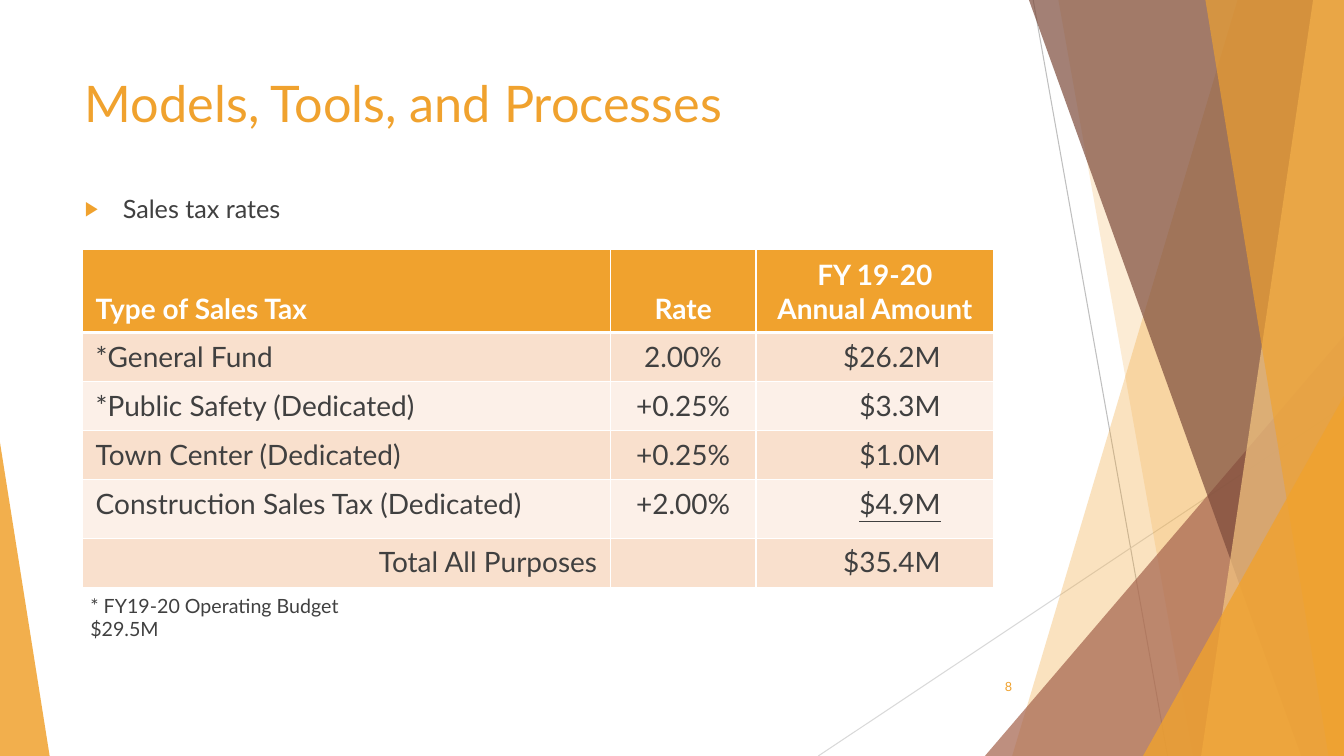
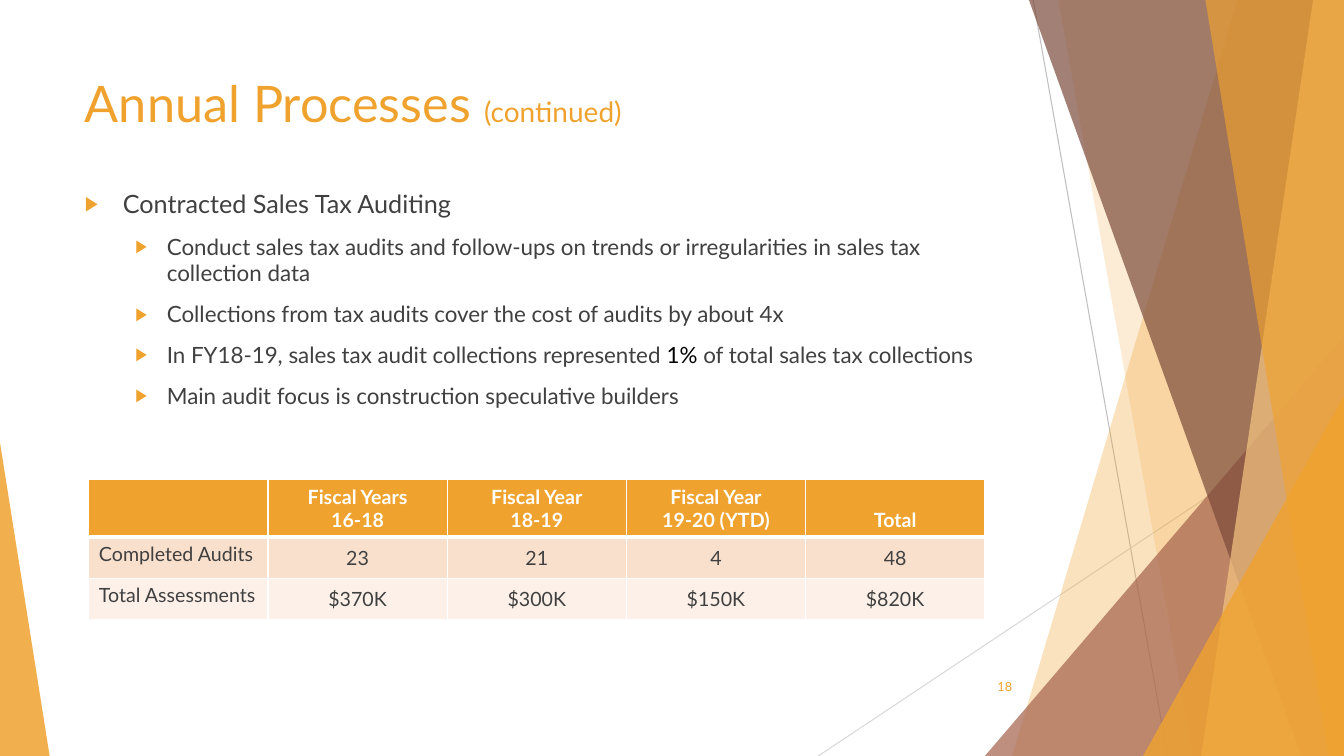
from dataclasses import dataclass

from pptx import Presentation
from pptx.dml.color import RGBColor
from pptx.enum.shapes import MSO_CONNECTOR, MSO_SHAPE
from pptx.enum.text import MSO_ANCHOR, MSO_AUTO_SIZE, PP_ALIGN
from pptx.oxml.ns import qn
from pptx.oxml.xmlchemy import OxmlElement
from pptx.util import Pt

LEFT, MID, RIGHT = PP_ALIGN.LEFT, PP_ALIGN.CENTER, PP_ALIGN.RIGHT
TOP, CENTER, BOTTOM = MSO_ANCHOR.TOP, MSO_ANCHOR.MIDDLE, MSO_ANCHOR.BOTTOM
STRAIGHT, TRIANGLE = MSO_CONNECTOR.STRAIGHT, MSO_SHAPE.ISOSCELES_TRIANGLE
FIXED = MSO_AUTO_SIZE.NONE

WIDE, HIGH = 960, 540
FACE = "Lato"
COLORS = {
    "gold": "F0A22E", "sand": "F6C782", "rust": "A5644E", "brown": "7C4B3B",
    "text": "404040", "black": "000000", "white": "FFFFFF",
    "dark": "F9E0CD", "light": "FCF0E8", "gray": "BFBFBF", "pale": "D9D9D9",
}
FRAME = {"word_wrap": True, "auto_size": FIXED, "vertical_anchor": TOP}


@dataclass(frozen=True)
class Band:
    """A panel reaching the right edge; head and foot are its left corners."""
    head: float
    foot: float
    color: str
    alpha: int


@dataclass(frozen=True)
class Wedge:
    """A right triangle standing on the slide's foot."""
    left: float
    top: float
    width: float
    tip: int
    color: str
    alpha: int


@dataclass(frozen=True)
class Ray:
    start: tuple[float, float]
    end: tuple[float, float]
    color: str


@dataclass(frozen=True)
class Run:
    text: str
    size: float
    color: str = "text"
    bold: bool = False
    under: bool = False


@dataclass(frozen=True)
class Level:
    indent: float
    hang: float


@dataclass(frozen=True)
class Item:
    level: int
    runs: list[Run]


@dataclass(frozen=True)
class Col:
    width: float
    align: PP_ALIGN
    anchor: MSO_ANCHOR = TOP
    inset: float | None = None


@dataclass(frozen=True)
class Cell:
    text: str
    align: PP_ALIGN | None = None
    under: bool = False


@dataclass(frozen=True)
class Grid:
    left: float
    top: float
    size: float
    side: float
    pad: float
    cols: list[Col]
    rows: list[float]
    cells: list[list[str | Cell]]


@dataclass(frozen=True)
class Page:
    number: str
    title: list[Run]
    items: list[Item]
    top: float
    height: float
    grid: Grid
    note: str = ""


RAYS = [Ray((738, 0), (834, HIGH), "gray"), Ray((WIDE, 290), (584.5, HIGH), "pale")]
PANELS = [
    Band(884, 723, "gold", 30),
    Band(756, 852, "gold", 20),
    Wedge(703.5, 240, 256.5, 1, "rust", 72),
    Band(735, 929.5, "brown", 70),
    Band(938, 858, "sand", 70),
    Band(861, 949, "gold", 65),
    Wedge(816.5, 283, 143.5, 1, "gold", 80),
    Wedge(0, 316, 35.5, 0, "gold", 85),
]
LEVELS = [Level(27, 27), Level(58.5, 22.5)]

RATES = Grid(
    59, 178, 20, 9.4, 5,
    [Col(377, LEFT), Col(104, MID), Col(170, RIGHT, inset=38)],
    [59.5, 35, 35, 35, 42, 35],
    [
        ["Type of Sales Tax", "Rate", "FY 19-20\nAnnual Amount"],
        ["*General Fund", "2.00%", "$26.2M"],
        ["*Public Safety (Dedicated)", "+0.25%", "$3.3M"],
        ["Town Center (Dedicated)", "+0.25%", "$1.0M"],
        ["Construction Sales Tax (Dedicated)", "+2.00%", Cell("$4.9M", under=True)],
        [Cell("Total All Purposes", RIGHT), "", "$35.4M"],
    ],
)
AUDITS = Grid(
    63.5, 342.5, 14, 7.2, 3.6,
    [Col(128, LEFT)] + [Col(128, MID, CENTER)] * 4,
    [41, 29.5, 29.5],
    [
        ["", "Fiscal Years\n16-18", "Fiscal Year\n18-19", "Fiscal Year\n19-20 (YTD)", "Total"],
        ["Completed Audits", "23", "21", "4", "48"],
        ["Total Assessments", "$370K", "$300K", "$150K", "$820K"],
    ],
)
PAGES = [
    Page("8", [Run("Models, Tools, and Processes", 36, "gold")],
         [Item(0, [Run("Sales tax rates", 18)])],
         134.5, 327, RATES, "* FY19-20 Operating Budget $29.5M"),
    Page("18", [Run("Annual Processes ", 36, "gold"), Run("(continued)", 20, "gold")],
         [
             Item(0, [Run("Contracted Sales Tax Auditing", 18)]),
             Item(1, [Run("Conduct sales tax audits and follow-ups on trends or "
                          "irregularities in sales tax collection data", 16)]),
             Item(1, [Run("Collections from tax audits cover the cost of audits by about 4x", 16)]),
             Item(1, [Run("In FY18-19, sales tax audit collections represented ", 16),
                      Run("1%", 16, "black"),
                      Run(" of total sales tax collections", 16)]),
             Item(1, [Run("Main audit focus is construction speculative builders", 16)]),
         ],
         131, 305, AUDITS),
]


def tint(name: str) -> RGBColor:
    return RGBColor.from_string(COLORS[name])


def apply(target, values: dict) -> None:
    for key, value in values.items():
        setattr(target, key, value)


def node(root, tag: str, **attrs):
    """Append a new XML child to root."""
    child = OxmlElement(tag)
    for key, value in attrs.items():
        child.set(key, str(value))
    root.append(child)
    return child


def write(para, runs: list[Run], align: PP_ALIGN = LEFT) -> None:
    para.alignment = align
    for item in runs:
        run = para.add_run()
        run.text = item.text
        apply(run.font, {"name": FACE, "size": Pt(item.size),
                         "bold": item.bold, "underline": item.under})
        run.font.color.rgb = tint(item.color)


def place(shape, left: float, top: float, width: float, height: float) -> None:
    apply(shape, {"left": Pt(left), "top": Pt(top),
                  "width": Pt(width), "height": Pt(height)})


def panel(shapes, part: Band | Wedge):
    if isinstance(part, Band):
        pen = shapes.build_freeform(Pt(part.head), 0, 1.0)
        pen.add_line_segments([(Pt(WIDE), 0), (Pt(WIDE), Pt(HIGH)), (Pt(part.foot), Pt(HIGH))])
        shape = pen.convert_to_shape()
    else:
        shape = shapes.add_shape(TRIANGLE, Pt(part.left), Pt(part.top),
                                 Pt(part.width), Pt(HIGH - part.top))
        shape.adjustments[0] = part.tip
    shape.shadow.inherit = False
    shape.line.fill.background()
    shape.fill.solid()
    shape.fill.fore_color.rgb = tint(part.color)
    paint = next(shape.element.spPr.iter(qn("a:srgbClr")))
    node(paint, "a:alpha", val=part.alpha * 1000)
    return shape


def streak(shapes, ray: Ray):
    line = shapes.add_connector(STRAIGHT, *map(Pt, ray.start + ray.end))
    line.line.width = Pt(0.75)
    line.line.color.rgb = tint(ray.color)
    node(line.element.spPr, "a:effectLst")
    return line


def adorn(layout, slide) -> None:
    """Draw the shared art on a slide, then move it to the layout."""
    art = [streak(slide.shapes, ray) for ray in RAYS]
    art += [panel(slide.shapes, part) for part in PANELS]
    for shape in art:
        layout.shapes.element.append(shape.element)


def fill_list(body, items: list[Item]) -> None:
    frame = body.text_frame
    apply(frame, FRAME)
    for index, item in enumerate(items):
        para = frame.add_paragraph() if index else frame.paragraphs[0]
        apply(para, {"level": item.level, "space_before": Pt(10)})
        write(para, item.runs)
        level, props = LEVELS[item.level], para._p.get_or_add_pPr()
        props.set("marL", str(Pt(level.indent)))
        props.set("indent", str(-Pt(level.hang)))
        node(node(props, "a:buClr"), "a:srgbClr", val=COLORS["gold"])
        node(props, "a:buSzPct", val=80000)
        node(props, "a:buChar", char="▶")


def edge(cell, row: int) -> None:
    """Give a cell white borders, thick below the header."""
    props = cell._tc.get_or_add_tcPr()
    thick = {"T": row == 1, "B": row == 0}
    for side in "LRTB":
        width = 3 if thick.get(side) else 1
        line = node(props, f"a:ln{side}", w=Pt(width))
        node(node(line, "a:solidFill"), "a:srgbClr", val=COLORS["white"])


def fill_cell(cell, grid: Grid, row: int, col: Col, data: Cell) -> None:
    head = row == 0
    edge(cell, row)
    cell.fill.solid()
    cell.fill.fore_color.rgb = tint("gold" if head else "dark" if row % 2 else "light")
    right = grid.side if head or col.inset is None else col.inset
    apply(cell, {"margin_left": Pt(grid.side), "margin_right": Pt(right),
                 "margin_top": Pt(grid.pad), "margin_bottom": Pt(grid.pad),
                 "vertical_anchor": BOTTOM if head else col.anchor})
    align = data.align or (MID if head and col.align != LEFT else col.align)
    if not data.text:
        return
    for index, text in enumerate(data.text.split("\n")):
        frame = cell.text_frame
        para = frame.add_paragraph() if index else frame.paragraphs[0]
        write(para, [Run(text, grid.size, "white" if head else "text", head, data.under)], align)


def add_grid(shapes, grid: Grid) -> None:
    width = sum(col.width for col in grid.cols)
    table = shapes.add_table(len(grid.rows), len(grid.cols), Pt(grid.left), Pt(grid.top),
                             Pt(width), Pt(sum(grid.rows))).table
    table.horz_banding = False
    for index, col in enumerate(grid.cols):
        table.columns[index].width = Pt(col.width)
    for row, height in enumerate(grid.rows):
        table.rows[row].height = Pt(height)
        for index, col in enumerate(grid.cols):
            data = grid.cells[row][index]
            data = Cell(data) if isinstance(data, str) else data
            fill_cell(table.cell(row, index), grid, row, col, data)


def label(shapes, box: tuple, run: Run, align: PP_ALIGN, anchor: MSO_ANCHOR) -> None:
    frame = shapes.add_textbox(*map(Pt, box)).text_frame
    apply(frame, FRAME | {"vertical_anchor": anchor})
    write(frame.paragraphs[0], [run], align)


def build(slide, page: Page) -> None:
    title, body = slide.shapes.title, slide.placeholders[1]
    place(title, 53.5, 48, 677, 103.5)
    apply(title.text_frame, FRAME)
    write(title.text_frame.paragraphs[0], page.title)
    place(body, 53.5, page.top, 677, page.height)
    fill_list(body, page.items)
    add_grid(slide.shapes, page.grid)
    label(slide.shapes, (676, 476, 54, 28.5), Run(page.number, 9, "gold"), RIGHT, CENTER)
    if page.note:
        label(slide.shapes, (57.5, 420.5, 225, 42), Run(page.note, 14), LEFT, TOP)


def main() -> None:
    deck = Presentation()
    apply(deck, {"slide_width": Pt(WIDE), "slide_height": Pt(HIGH)})
    layout = deck.slide_layouts[1]
    slides = [deck.slides.add_slide(layout) for _ in PAGES]
    adorn(layout, slides[0])
    for slide, page in zip(slides, PAGES):
        build(slide, page)
    deck.save("out.pptx")


if __name__ == "__main__":
    main()
